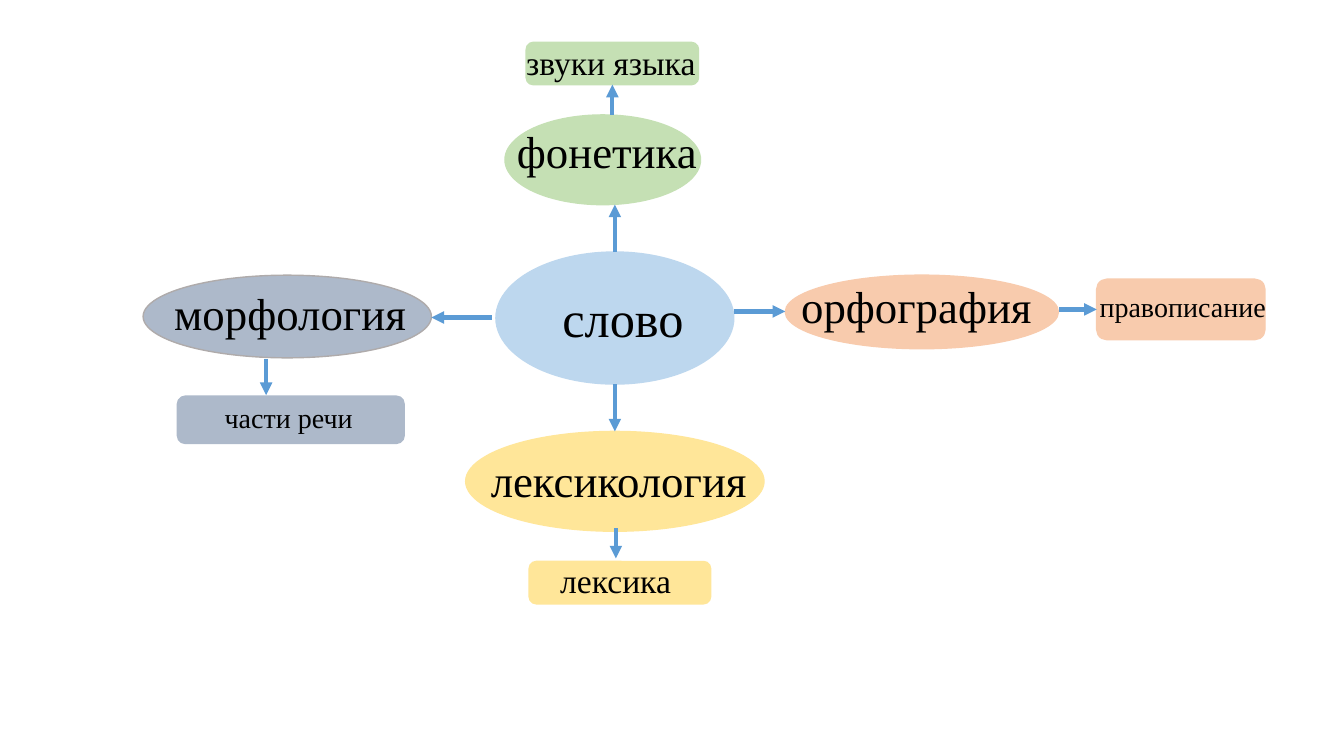
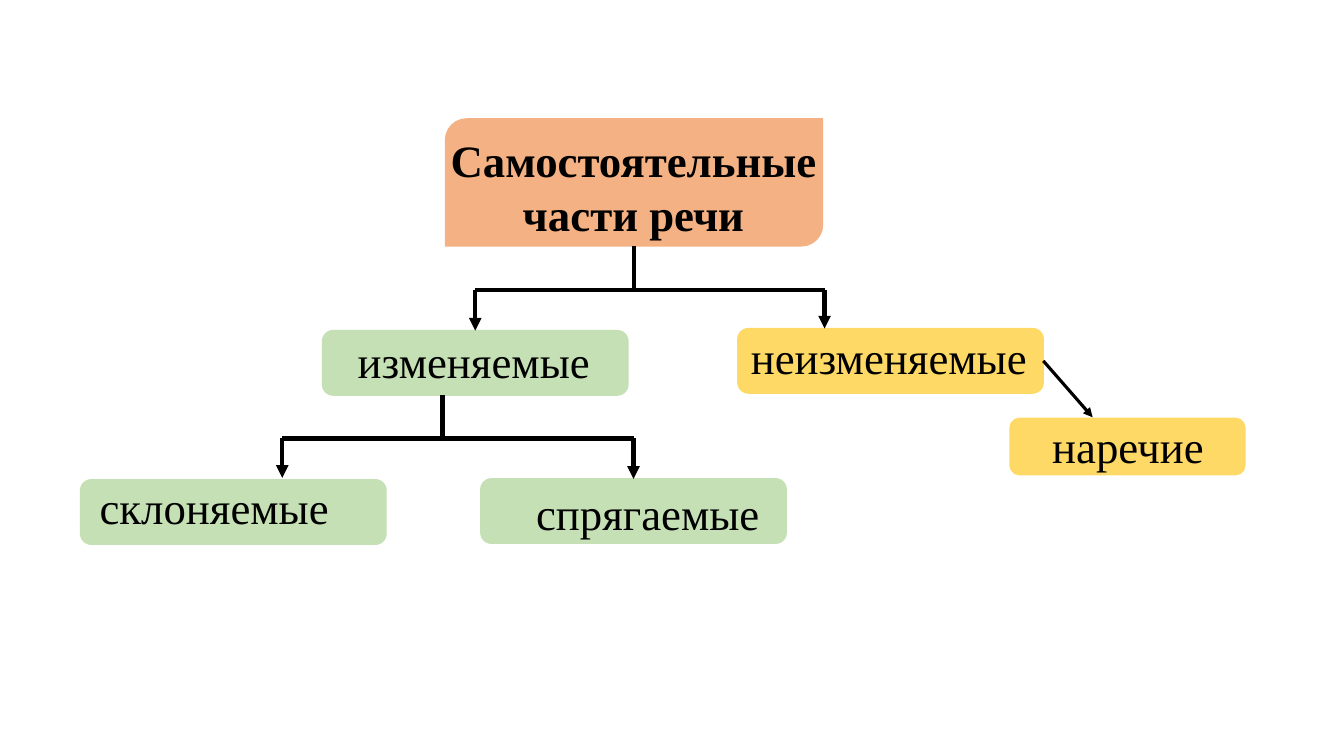
from dataclasses import dataclass

from lxml.etree import SubElement
from pptx import Presentation
from pptx.dml.color import RGBColor
from pptx.enum.shapes import MSO_CONNECTOR, MSO_SHAPE as Form
from pptx.enum.text import MSO_AUTO_SIZE, PP_ALIGN as Align
from pptx.oxml.ns import qn
from pptx.util import Inches, Pt

COLUMNS, ROWS = 133.33, 75
TOP, LEFT, RIGHT = 0, 1, 3


@dataclass(frozen=True)
class Theme:
    """Colours, font, type sizes and line widths."""
    font: str = "Times New Roman"
    ink: str = "000000"
    arrow: str = "5B9BD5"
    sky: str = "BDD7EE"
    green: str = "C5E0B4"
    peach: str = "F8CBAD"
    orange: str = "F4B183"
    cream: str = "FFE699"
    gold: str = "FFD966"
    slate: str = "ADB9CA"
    grey: str = "AFABAB"
    core: int = 36
    head: int = 32
    note: int = 24
    small: int = 20
    outline: float = 1
    stroke: float = 3
    thin: float = 2.25


class Deck:
    """Holds the theme and current slide and draws on a grid of tenth-inch cells."""

    def __init__(self, theme):
        """Start an empty presentation."""
        self.theme = theme
        self.show = Presentation()
        self.show.slide_width = self.cells(COLUMNS)
        self.show.slide_height = self.cells(ROWS)

    @staticmethod
    def cells(count):
        """Turn grid cells into a length."""
        return Inches(count / 10)

    def new_slide(self):
        """Add a blank slide and make it current."""
        self.shapes = self.show.slides.add_slide(self.show.slide_layouts[6]).shapes

    def node(self, form, at, fill, outline=None):
        """Draw a filled form at (column, row, width, height)."""
        node = self.shapes.add_shape(form, *map(self.cells, at))
        node.shadow.inherit = False
        node.fill.solid()
        node.fill.fore_color.rgb = RGBColor.from_string(fill)
        node.line.color.rgb = RGBColor.from_string(outline or fill)
        node.line.width = Pt(self.theme.outline)
        return node

    def label(self, text, at, size=None, bold=False, align=Align.LEFT):
        """Write text at (column, row, width, height)."""
        label = self.shapes.add_textbox(*map(self.cells, at))
        frame = label.text_frame
        frame.word_wrap = True
        frame.auto_size = MSO_AUTO_SIZE.SHAPE_TO_FIT_TEXT
        words = frame.paragraphs[0]
        words.alignment = align
        run = words.add_run()
        run.text = text
        run.font.name = self.theme.font
        run.font.size = Pt(size or self.theme.head)
        run.font.bold = bold
        run.font.color.rgb = RGBColor.from_string(self.theme.ink)

    def link(self, start, end, colour, width=None, head=True, source=None, target=None):
        """Draw a line between two points, joined to (node, side) where given."""
        link = self.shapes.add_connector(
            MSO_CONNECTOR.STRAIGHT, *map(self.cells, (*start, *end)))
        if source:
            link.begin_connect(*source)
        if target:
            link.end_connect(*target)
        link.line.color.rgb = RGBColor.from_string(colour)
        link.line.width = Pt(width or self.theme.stroke)
        if head:
            SubElement(link.line._get_or_add_ln(), qn("a:tailEnd"), type="triangle")
        SubElement(link._element.spPr, qn("a:effectLst"))

    def fork(self, stem, top, bar, tips):
        """Draw a stem, a crossbar and an arrow to each (column, row, target)."""
        ink = self.theme.ink
        self.link((stem, top), (stem, bar), ink, head=False)
        self.link((tips[0][0], bar), (tips[-1][0], bar), ink, head=False)
        for column, row, target in tips:
            self.link((column, bar), (column, row), ink, target=target)


def language_sections(deck):
    """Draw the word with the branches of language study around it."""
    t = deck.theme
    deck.new_slide()
    word = deck.node(Form.OVAL, (49.2, 25, 23.6, 13.1), t.sky)
    deck.node(Form.OVAL, (50.1, 11.4, 19.4, 8.9), t.green)
    deck.node(Form.OVAL, (77.9, 27.3, 27.1, 7.3), t.peach)
    lexicology = deck.node(Form.OVAL, (46.2, 42.8, 29.6, 9.9), t.cream)
    deck.node(Form.OVAL, (14.2, 27.3, 28.6, 8.2), t.slate, outline=t.grey)
    sounds = deck.node(Form.ROUNDED_RECTANGLE, (52.2, 4.2, 17.1, 4.2), t.green)
    spelling = deck.node(Form.ROUNDED_RECTANGLE, (108.8, 27.7, 16.7, 6), t.peach)
    deck.node(Form.ROUNDED_RECTANGLE, (52.5, 55.7, 18, 4.2), t.cream)
    deck.node(Form.ROUNDED_RECTANGLE, (17.6, 39.3, 22.5, 4.7), t.slate)

    for start, end, source, target in (
        ((61, 25), (61, 20.3), (word, TOP), None),
        ((60.75, 11.4), (60.75, 8.4), None, (sounds, 2)),
        ((48.8, 31.5), (42.8, 31.5), None, None),
        ((61, 38.1), (61, 42.8), None, (lexicology, TOP)),
        ((72.8, 30.9), (77.9, 30.9), None, None),
        ((105.1, 30.7), (108.8, 30.7), None, (spelling, LEFT)),
        ((61.1, 52.4), (61.1, 55.4), None, None),
        ((26.4, 35.6), (26.4, 39.2), None, None),
    ):
        deck.link(start, end, t.arrow, source=source, target=target)

    for text, at, size in (
        ("слово", (54.8, 28, 16.5, 7.1), t.core),
        ("фонетика", (50.3, 11.8, 25.7, 6.4), t.head),
        ("орфография", (78.5, 27.2, 28.6, 6.4), t.head),
        ("лексикология", (47.7, 44.4, 32.1, 6.4), t.head),
        ("морфология", (16.3, 27.9, 26.6, 6.4), t.head),
        ("звуки языка", (51.2, 3.7, 27.1, 5), t.note),
        ("лексика", (54.6, 55.1, 24.3, 5), t.note),
        ("правописание", (108.1, 28.2, 21, 4.4), t.small),
        ("части речи", (21.3, 39.2, 18.5, 4.4), t.small),
    ):
        deck.label(text, at, size=size)


def parts_of_speech(deck):
    """Draw the tree of independent parts of speech."""
    t = deck.theme
    deck.new_slide()
    box = Form.FLOWCHART_ALTERNATE_PROCESS
    width, height = 30.3, 6.4
    deck.node(Form.ROUND_2_DIAG_RECTANGLE, (44.2, 11.8, 37.4, 12.6), t.orange)
    changing = deck.node(box, (32, 32.8, width, height), t.green)
    fixed = deck.node(box, (73.2, 32.6, width, height), t.gold)
    deck.node(box, (8, 47.6, width, height), t.green)
    conjugated = deck.node(box, (47.7, 47.5, width, height), t.green)
    deck.node(box, (100.2, 41.5, 23.3, 5.6), t.gold)

    deck.fork(62.9, 24.4, 28.8,
              ((47.15, 32.8, (changing, TOP)), (81.8, 32.6, None)))
    deck.fork(43.9, 39.2, 43.5,
              ((28, 47.4, None), (62.85, 47.5, (conjugated, TOP))))
    deck.link((103.5, 35.8), (108.4, 41.4), t.ink, width=t.thin,
              source=(fixed, RIGHT))

    deck.label("Самостоятельные части речи", (43.6, 12.7, 38.5, 11.8),
               bold=True, align=Align.CENTER)
    for text, at in (
        ("изменяемые", (34.5, 32.6, 27.8, height)),
        ("неизменяемые", (73.5, 32.2, 33.1, height)),
        ("наречие", (103.4, 41, 21.9, height)),
        ("склоняемые", (8.9, 47.1, 28.3, height)),
        ("спрягаемые", (52.2, 47.7, 28.3, height)),
    ):
        deck.label(text, at)


def main():
    """Build both slides and save them."""
    deck = Deck(Theme())
    language_sections(deck)
    parts_of_speech(deck)
    deck.show.save("out.pptx")


if __name__ == "__main__":
    main()
